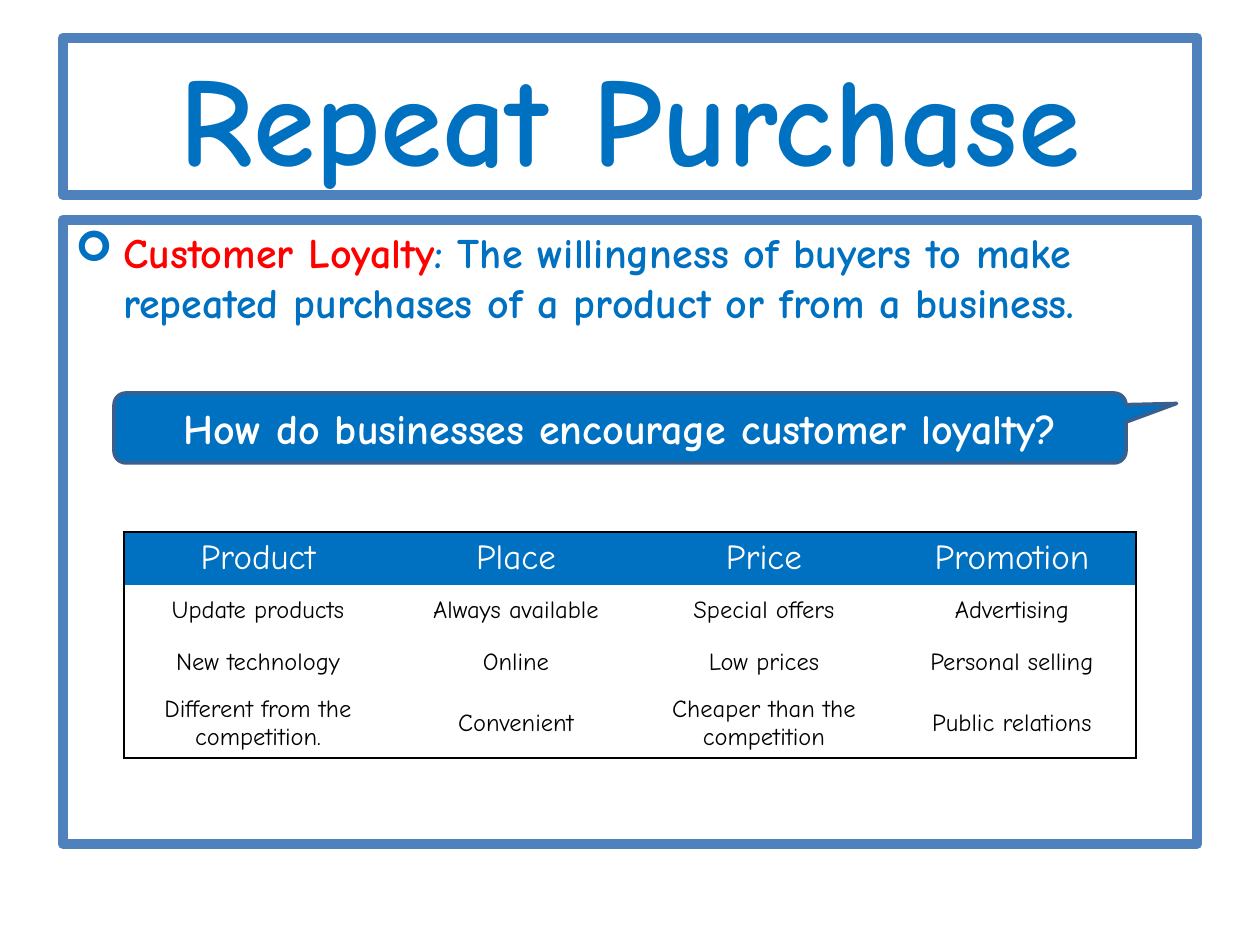
"""Build the Repeat Purchase slide with its definition, question and marketing table."""
from dataclasses import dataclass

from lxml.etree import SubElement
from pptx import Presentation
from pptx.dml.color import RGBColor
from pptx.enum.shapes import MSO_SHAPE
from pptx.enum.text import MSO_ANCHOR, PP_ALIGN
from pptx.oxml import parse_xml
from pptx.oxml.ns import nsdecls, qn
from pptx.util import Emu, Pt

FONT = "Comic Neue"
BLUE, FRAME, OUTLINE = "0070C0", "4F81BD", "3A5F8C"
RED, WHITE, BLACK = "FF0000", "FFFFFF", "000000"


@dataclass(frozen=True)
class Span:
    text: str
    size: int
    color: str
    bold: bool = True


@dataclass(frozen=True)
class Panel:
    area: tuple[int, int, int, int]
    spans: tuple[Span, ...]
    fill: str = WHITE
    line: str = FRAME
    line_width: int = 6
    preset: MSO_SHAPE = MSO_SHAPE.RECTANGLE
    adjustments: tuple[float, ...] = ()
    bullet: str = ""


PANELS = (
    Panel((63, 38, 1134, 157), (Span("Repeat Purchase", 72, BLUE),)),
    Panel(
        (63, 220, 1134, 624),
        (
            Span("Customer Loyalty", 24, RED),
            Span(": The willingness of buyers to make repeated purchases "
                 "of a product or from a business.", 24, BLUE),
        ),
        bullet="➢",
    ),
    Panel(
        (114, 393, 1012, 70),
        (Span("How do businesses encourage customer loyalty?", 24, WHITE),),
        BLUE, OUTLINE, 2,
        MSO_SHAPE.ROUNDED_RECTANGULAR_CALLOUT, (0.55, -0.35, 0.17),
    ),
)
TABLE_LEFT, TABLE_TOP, ROW_HEIGHT = 124, 532, 52
COLUMN_WIDTHS = (268, 248, 248, 248)
ROWS = (
    ("Product", "Place", "Price", "Promotion"),
    ("Update products", "Always available", "Special offers", "Advertising"),
    ("New technology", "Online", "Low prices", "Personal selling"),
    ("Different from the competition.", "Convenient",
     "Cheaper than the competition", "Public relations"),
)


def px(length: int) -> Emu:
    """Turn a length in pixels into EMU."""
    return Emu(round(length * 914400 / 126))


def rgb(color: str) -> RGBColor:
    """Turn a hex string into a colour."""
    return RGBColor.from_string(color)


def add_span(para, span: Span) -> None:
    """Add one formatted run to a paragraph."""
    run = para.add_run()
    run.text = span.text
    run.font.name = FONT
    run.font.size = Pt(span.size)
    run.font.bold = span.bold
    run.font.color.rgb = rgb(span.color)


def set_bullet(para, symbol: str, color: str) -> None:
    """Give a paragraph a hanging bullet."""
    properties = para._p.get_or_add_pPr()
    properties.set("marL", str(px(48)))
    properties.set("indent", str(-px(48)))
    bullet_color = SubElement(properties, qn("a:buClr"))
    SubElement(bullet_color, qn("a:srgbClr"), val=color)
    SubElement(properties, qn("a:buFont"), typeface="Wingdings")
    SubElement(properties, qn("a:buChar"), char=symbol)


def add_panel(page, panel: Panel) -> None:
    """Draw a framed shape with its text."""
    box = page.shapes.add_shape(panel.preset, *map(px, panel.area))
    for index, value in enumerate(panel.adjustments):
        box.adjustments[index] = value
    box.shadow.inherit = False
    box.fill.solid()
    box.fill.fore_color.rgb = rgb(panel.fill)
    box.line.color.rgb = rgb(panel.line)
    box.line.width = Pt(panel.line_width)
    frame = box.text_frame
    frame.word_wrap = True
    para = frame.paragraphs[0]
    if panel.bullet:
        frame.vertical_anchor = MSO_ANCHOR.TOP
        para.alignment = PP_ALIGN.LEFT
        set_bullet(para, panel.bullet, BLUE)
    else:
        frame.vertical_anchor = MSO_ANCHOR.MIDDLE
        para.alignment = PP_ALIGN.CENTER
    for span in panel.spans:
        add_span(para, span)


def set_borders(cell, sides: dict[str, bool]) -> None:
    """Draw the chosen sides of a cell in black and hide the others."""
    properties = cell._tc.get_or_add_tcPr()
    for index, (side, visible) in enumerate(sides.items()):
        paint = (f'<a:solidFill><a:srgbClr val="{BLACK}"/></a:solidFill>'
                 if visible else "<a:noFill/>")
        properties.insert(index, parse_xml(
            f'<a:ln{side} {nsdecls("a")} w="{Pt(1)}">{paint}</a:ln{side}>'))


def add_marketing_table(page) -> None:
    """Draw the table of ways to encourage loyalty."""
    last_row, last_column = len(ROWS) - 1, len(COLUMN_WIDTHS) - 1
    table = page.shapes.add_table(
        len(ROWS), len(COLUMN_WIDTHS), px(TABLE_LEFT), px(TABLE_TOP),
        px(sum(COLUMN_WIDTHS)), px(ROW_HEIGHT * len(ROWS))).table
    for column, width in zip(table.columns, COLUMN_WIDTHS):
        column.width = px(width)
    for r, texts in enumerate(ROWS):
        table.rows[r].height = px(ROW_HEIGHT)
        header = r == 0
        for c, text in enumerate(texts):
            cell = table.cell(r, c)
            cell.fill.solid()
            cell.fill.fore_color.rgb = rgb(BLUE if header else WHITE)
            cell.vertical_anchor = MSO_ANCHOR.TOP if header else MSO_ANCHOR.MIDDLE
            set_borders(cell, {"L": c == 0, "R": c == last_column,
                               "T": header, "B": r == last_row})
            para = cell.text_frame.paragraphs[0]
            para.alignment = PP_ALIGN.CENTER
            add_span(para, Span(text, 20 if header else 14,
                                WHITE if header else BLACK, False))


def main() -> None:
    """Build and save the deck."""
    deck = Presentation()
    deck.slide_width, deck.slide_height = px(1260), px(945)
    page = deck.slides.add_slide(deck.slide_layouts[6])
    for panel in PANELS:
        add_panel(page, panel)
    add_marketing_table(page)
    deck.save("out.pptx")


if __name__ == "__main__":
    main()
